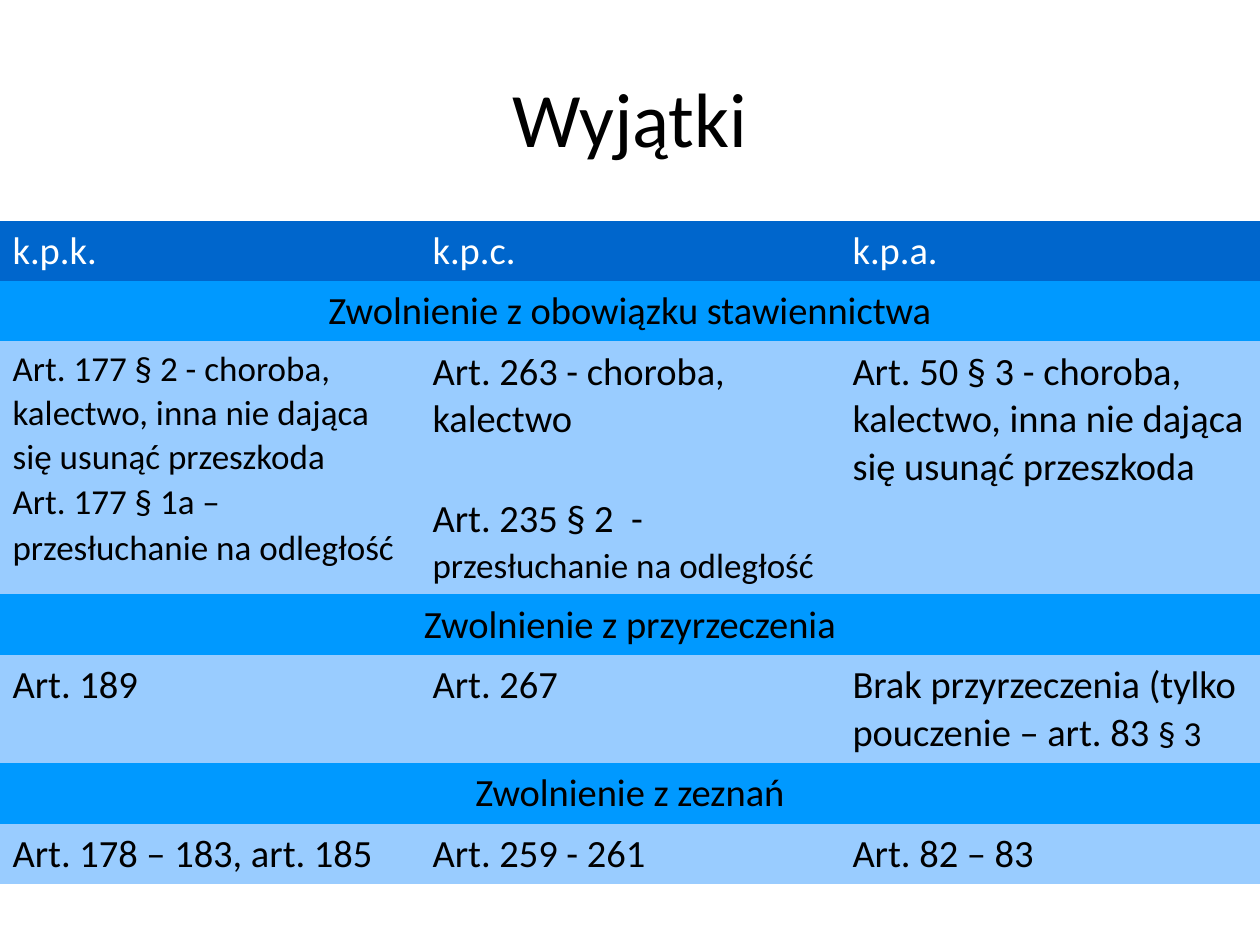
"""Build the slide comparing witness exceptions in three procedures."""
import pptx
import pptx.dml.color
import pptx.enum.text
import pptx.oxml.ns
import pptx.util

Inches = pptx.util.Inches
Pt = pptx.util.Pt
ALIGN = pptx.enum.text.PP_ALIGN

COLORS = {"header": "0066CC", "section": "0099FF", "body": "99CCFF",
          "white": "FFFFFF", "black": "000000"}
FONT = "Calibri"
LARGE, SMALL = 22, 20
FIRST_SPACING, NEXT_SPACING = 1.02, 1.06
PARAGRAPH_GAP = 28.5
NO_STYLE = "{2D5ABB26-0587-4C30-8999-92F81FD0307C}"

TITLE = "Wyjątki"
TITLE_BOX = {"left": 0.5, "top": 0.14, "width": 9, "height": 1.57}
TABLE_BOX = (0, 1.75, 10, 5.23)
COLUMNS = 3

ILLNESS = "choroba, kalectwo"
OBSTACLE = ILLNESS + ", inna nie dająca się usunąć przeszkoda"
REMOTE = "przesłuchanie na odległość"

ROWS = [
    ("header", 0.48, ["k.p.k.", "k.p.c.", "k.p.a."]),
    ("section", 0.48, ["Zwolnienie z obowiązku stawiennictwa"]),
    ("body", 1.97, [
        [[("Art. 177 § 2 - " + OBSTACLE, SMALL)],
         [("Art. 177 § 1a – " + REMOTE, SMALL)]],
        [[("Art. 263 - " + ILLNESS, LARGE)],
         [("Art. 235 § 2  - ", LARGE), (REMOTE, SMALL)]],
        "Art. 50 § 3 - " + OBSTACLE,
    ]),
    ("section", 0.48, ["Zwolnienie z przyrzeczenia"]),
    ("body", 0.86, [
        "Art. 189",
        "Art. 267",
        [[("Brak przyrzeczenia (tylko pouczenie – art. 83 ", LARGE), ("§ 3", SMALL)]],
    ]),
    ("section", 0.48, ["Zwolnienie z zeznań"]),
    ("body", 0.48, ["Art. 178 – 183, art. 185", "Art. 259 - 261", "Art. 82 – 83"]),
]


def rgb(name):
    return pptx.dml.color.RGBColor.from_string(COLORS[name])


def set_attributes(target, values):
    for name, value in values.items():
        setattr(target, name, value)


def add_run(paragraph, text, size, color):
    run = paragraph.add_run()
    run.text = text
    set_attributes(run.font, {"name": FONT, "size": Pt(size), "bold": False})
    run.font.color.rgb = rgb(color)


def fill_cell(cell, content, kind):
    paragraphs = [[(content, LARGE)]] if isinstance(content, str) else content
    color = "white" if kind == "header" else "black"
    cell.fill.solid()
    cell.fill.fore_color.rgb = rgb(kind)
    for index, runs in enumerate(paragraphs):
        frame = cell.text_frame
        paragraph = frame.add_paragraph() if index else frame.paragraphs[0]
        starts_large = runs[0][1] == LARGE
        set_attributes(paragraph, {
            "alignment": ALIGN.CENTER if kind == "section" else ALIGN.LEFT,
            "line_spacing": NEXT_SPACING if index else FIRST_SPACING,
            "space_before": Pt(PARAGRAPH_GAP if index and starts_large else 0),
        })
        for text, size in runs:
            add_run(paragraph, text, size, color)


def add_title(slide):
    title = slide.shapes.title
    set_attributes(title, {name: Inches(value) for name, value in TITLE_BOX.items()})
    title.text_frame.vertical_anchor = pptx.enum.text.MSO_ANCHOR.MIDDLE
    paragraph = title.text_frame.paragraphs[0]
    paragraph.alignment = ALIGN.CENTER
    add_run(paragraph, TITLE, 44, "black")


def add_exceptions_table(slide):
    frame = slide.shapes.add_table(len(ROWS), COLUMNS, *map(Inches, TABLE_BOX))
    table = frame.table
    set_attributes(table, {"first_row": False, "horz_banding": False})
    for style in frame.element.iter(pptx.oxml.ns.qn("a:tableStyleId")):
        style.text = NO_STYLE
    for column in table.columns:
        column.width = Inches(TABLE_BOX[2] / COLUMNS)
    for row, (kind, height, contents) in enumerate(ROWS):
        table.rows[row].height = Inches(height)
        if kind == "section":
            table.cell(row, 0).merge(table.cell(row, COLUMNS - 1))
        for column, content in enumerate(contents):
            fill_cell(table.cell(row, column), content, kind)


def main():
    presentation = pptx.Presentation()
    set_attributes(presentation, {"slide_width": Inches(10), "slide_height": Inches(7.5)})
    slide = presentation.slides.add_slide(presentation.slide_layouts[5])
    add_title(slide)
    add_exceptions_table(slide)
    presentation.save("out.pptx")


if __name__ == "__main__":
    main()
